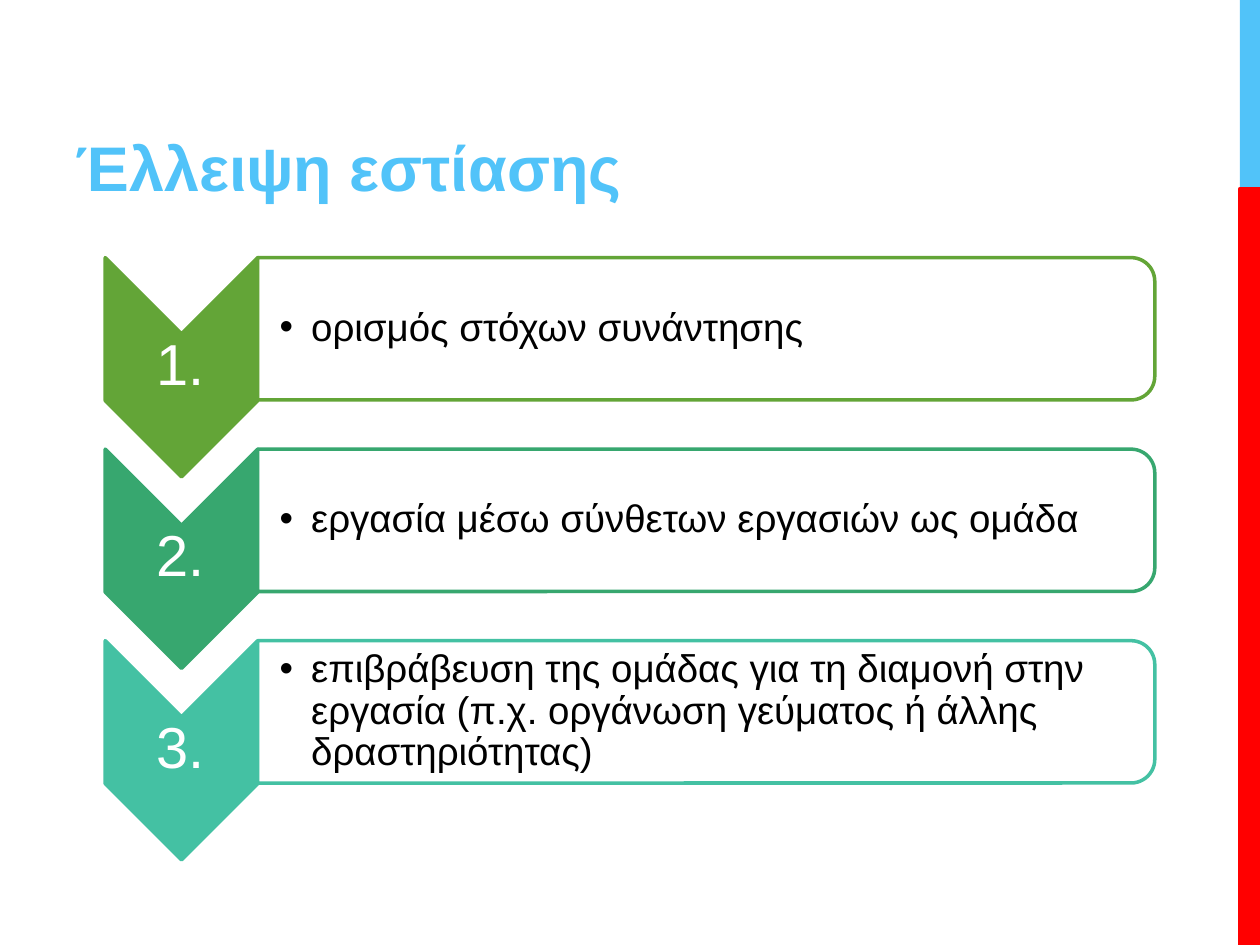
import pptx
import pptx.util
import pptx.dml.color
import pptx.enum.shapes
import pptx.enum.text
import pptx.oxml
import pptx.oxml.ns

Inches, Pt = pptx.util.Inches, pptx.util.Pt
RGBColor = pptx.dml.color.RGBColor
MSO_SHAPE = pptx.enum.shapes.MSO_SHAPE
ANCHOR = pptx.enum.text.MSO_ANCHOR
ALIGN = pptx.enum.text.PP_ALIGN

WHITE = RGBColor(0xFF, 0xFF, 0xFF)
BLACK = RGBColor(0x00, 0x00, 0x00)
SKY = RGBColor(0x51, 0xC3, 0xF9)
RED = RGBColor(0xFF, 0x00, 0x00)
GREEN = RGBColor(0x63, 0xA5, 0x37)
EMERALD = RGBColor(0x37, 0xA7, 0x6F)
TEAL = RGBColor(0x44, 0xC1, 0xA3)

STEPS = [
    ("1.", "ορισμός στόχων συνάντησης", GREEN),
    ("2.", "εργασία μέσω σύνθετων εργασιών ως ομάδα", EMERALD),
    ("3.", "επιβράβευση της ομάδας για τη διαμονή στην εργασία "
           "(π.χ. οργάνωση γεύματος ή άλλης δραστηριότητας)", TEAL),
]
STEP_PITCH = 1.52


def set_attrs(obj, values):
    """Set every attribute named in a dict of format values."""
    for name, value in values.items():
        setattr(obj, name, value)


def add_block(s, kind, box, fill, line=None, width=2, rotation=0):
    """Add a filled preset shape with an optional outline."""
    sp = s.shapes.add_shape(kind, *map(Inches, box))
    sp.shadow.inherit = False
    sp.rotation = rotation
    sp.fill.solid()
    sp.fill.fore_color.rgb = fill
    if line is None:
        sp.line.fill.background()
    else:
        sp.line.color.rgb = line
        sp.line.width = Pt(width)
    return sp


def set_opacity(sp, percent):
    """Make the solid fill of a shape partly transparent."""
    clr = sp.fill._xPr.find(".//" + pptx.oxml.ns.qn("a:srgbClr"))
    clr.append(pptx.oxml.parse_xml(
        f'<a:alpha {pptx.oxml.ns.nsdecls("a")} val="{percent * 1000}"/>'))


def add_bullet(p):
    """Give a paragraph a hanging black bullet."""
    pPr = p._p.get_or_add_pPr()
    pPr.set("marL", str(Inches(0.25)))
    pPr.set("indent", str(Inches(-0.25)))
    ns = pptx.oxml.ns.nsdecls("a")
    for xml in (f'<a:buClr {ns}><a:srgbClr val="{BLACK}"/></a:buClr>',
                f'<a:buFont {ns} typeface="Arial"/>',
                f'<a:buChar {ns} char="•"/>'):
        pPr.append(pptx.oxml.parse_xml(xml))


def add_text(s, box, text, size, color, frame, para, bold=False, bullet=False):
    """Add a wrapped text box holding one paragraph."""
    tf = s.shapes.add_textbox(*map(Inches, box)).text_frame
    set_attrs(tf, {"word_wrap": True, **frame})
    p = tf.paragraphs[0]
    if bullet:
        add_bullet(p)
    set_attrs(p, para)
    r = p.add_run()
    r.text = text
    set_attrs(r.font, {"name": "Arial", "size": Pt(size), "bold": bold})
    r.font.color.rgb = color


def add_step(s, top, number, text, color):
    """Add a numbered chevron with its rounded text panel."""
    inset = Inches(0.02)
    frame = {"vertical_anchor": ANCHOR.MIDDLE, "margin_left": inset,
             "margin_right": inset, "margin_top": inset, "margin_bottom": inset}
    add_block(s, MSO_SHAPE.CHEVRON, (0.57, top + 0.26, 1.74, 1.21),
              color, color, rotation=90)
    add_text(s, (0.83, top + 0.6, 1.21, 0.52), number, 33, WHITE, frame,
             {"alignment": ALIGN.CENTER, "line_spacing": 0.9})
    panel = add_block(s, MSO_SHAPE.ROUND_2_SAME_RECTANGLE,
                      (5.04, top - 3, 1.13, 7.12), WHITE, color, rotation=90)
    set_opacity(panel, 90)
    add_text(s, (2.05, top + 0.05, 7.06, 1.02), text, 22, BLACK,
             {**frame, "margin_left": Inches(0.17)},
             {"line_spacing": 0.9}, bullet=True)


def main():
    """Build the slide and save it."""
    prs = pptx.Presentation()
    set_attrs(prs, {"slide_width": Inches(10), "slide_height": Inches(7.5)})
    s = prs.slides.add_slide(prs.slide_layouts[6])
    add_block(s, MSO_SHAPE.RECTANGLE, (9.84, 0, 0.16, 1.5), SKY)
    add_block(s, MSO_SHAPE.RECTANGLE, (9.84, 1.5, 0.16, 6), RED, RED, 2.25)
    add_text(s, (0.5, 0.17, 7.02, 1.5), "Έλλειψη εστίασης", 36, SKY,
             {"vertical_anchor": ANCHOR.BOTTOM}, {}, bold=True)
    for i, (number, text, color) in enumerate(STEPS):
        add_step(s, 2.05 + i * STEP_PITCH, number, text, color)
    prs.save("out.pptx")


if __name__ == "__main__":
    main()
